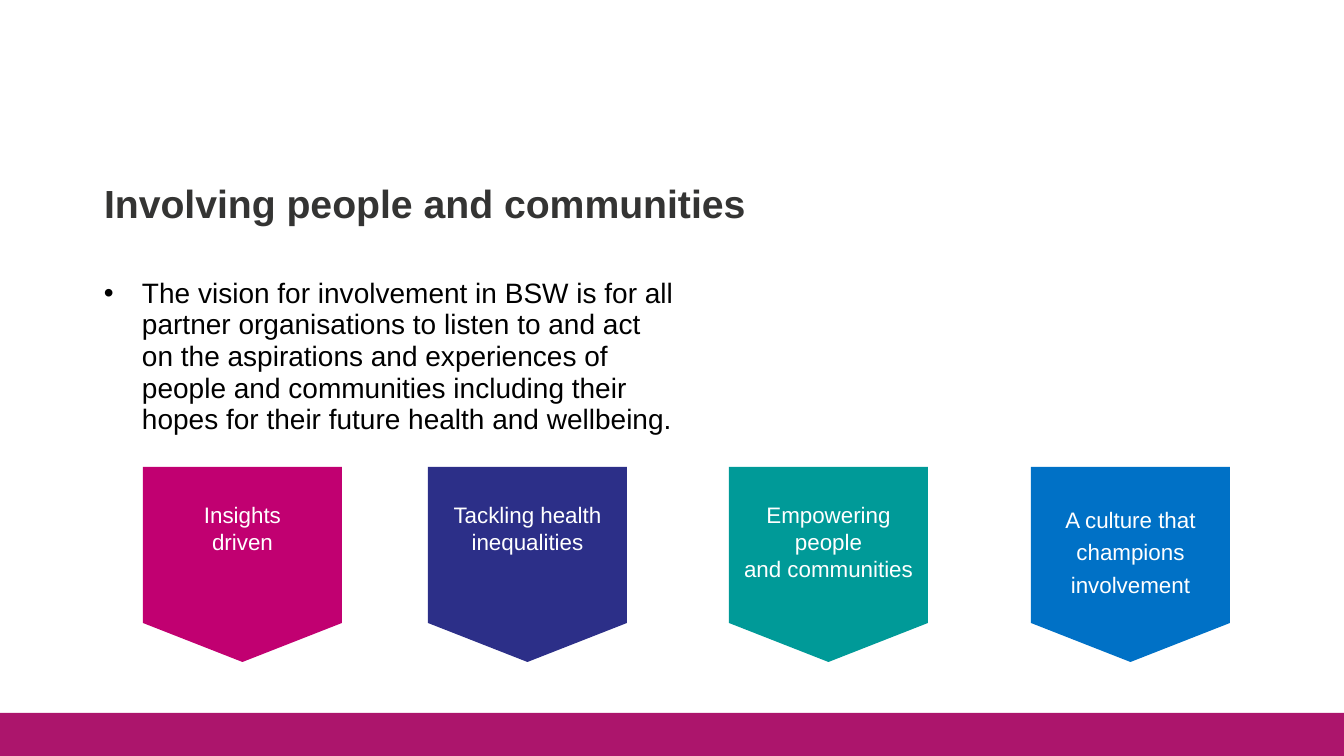
from pptx import Presentation
from pptx.dml.color import RGBColor
from pptx.enum.shapes import MSO_SHAPE as SHAPE
from pptx.enum.text import MSO_ANCHOR as ANCHOR, PP_ALIGN as ALIGN
from pptx.oxml.ns import qn
from pptx.util import Pt
from lxml.etree import SubElement

WIDTH, HEIGHT = 1344, 756
EMU_PER_PX = 12192000 / WIDTH

WHITE = RGBColor(0xFF, 0xFF, 0xFF)
BLACK = RGBColor(0x00, 0x00, 0x00)
CHARCOAL = RGBColor(0x34, 0x34, 0x33)
PLUM = RGBColor(0xAC, 0x15, 0x6C)
MAGENTA = RGBColor(0xC1, 0x00, 0x71)
INDIGO = RGBColor(0x2C, 0x2F, 0x88)
TEAL = RGBColor(0x00, 0x9A, 0x98)
BLUE = RGBColor(0x00, 0x71, 0xC6)

PRINCIPLES = [
    (143, MAGENTA, "Insights\vdriven", 1.0),
    (428, INDIGO, "Tackling health\vinequalities", 1.0),
    (729, TEAL, "Empowering people\vand communities", 1.0),
    (1031, BLUE, "A culture that champions involvement", 1.2),
]


def px(n):
    return round(n * EMU_PER_PX)


class Deck:
    """Holds the text style and the slide being built."""

    font = "Arial"

    def __init__(self, prs):
        self.s = prs.slides.add_slide(prs.slide_layouts[5])

    def place(self, sp, x, y, w, h):
        box = {"left": x, "top": y, "width": w, "height": h}
        for name, value in box.items():
            setattr(sp, name, px(value))

    def set_text(self, sp, text, size, color, spacing, align=ALIGN.LEFT,
                 bold=False, inset=5, bullet_indent=0):
        """Fill a shape with one top-anchored paragraph; inset is its top margin."""
        tf = sp.text_frame
        frame = {"word_wrap": True, "vertical_anchor": ANCHOR.TOP,
                 "margin_left": px(10), "margin_right": px(10),
                 "margin_top": px(inset), "margin_bottom": px(5)}
        for name, value in frame.items():
            setattr(tf, name, value)
        p = tf.paragraphs[0]
        p.text = text
        p.alignment, p.line_spacing = align, spacing
        if bullet_indent:
            pPr = p._p.get_or_add_pPr()
            pPr.set("marL", str(px(bullet_indent)))
            pPr.set("indent", str(-px(bullet_indent)))
            SubElement(pPr, qn("a:buFont")).set("typeface", self.font)
            SubElement(pPr, qn("a:buChar")).set("char", "•")
        style = {"name": self.font, "size": Pt(size), "bold": bold}
        for r in p.runs:
            for name, value in style.items():
                setattr(r.font, name, value)
            r.font.color.rgb = color

    def title(self, text, *box):
        sp = self.s.shapes.title
        self.place(sp, *box)
        self.set_text(sp, text, 28, CHARCOAL, 0.9, bold=True)

    def bullet(self, text, *box):
        sp = self.s.shapes.add_textbox(*map(px, box))
        self.set_text(sp, text, 20, BLACK, 0.94, bullet_indent=38)

    def shape(self, kind, fill, *box):
        sp = self.s.shapes.add_shape(kind, *map(px, box))
        sp.shadow.inherit = False
        sp.fill.solid()
        sp.fill.fore_color.rgb = fill
        sp.line.fill.background()
        return sp

    def principle(self, x, fill, text, spacing):
        sp = self.shape(SHAPE.FLOWCHART_OFFPAGE_CONNECTOR, fill, x, 467, 199, 195)
        self.set_text(sp, text, 16, WHITE, spacing, ALIGN.CENTER, inset=34)


def main():
    prs = Presentation()
    prs.slide_width, prs.slide_height = px(WIDTH), px(HEIGHT)
    deck = Deck(prs)
    deck.shape(SHAPE.RECTANGLE, PLUM, 0, 713, WIDTH, HEIGHT - 713)
    deck.title("Involving people and communities", 94, 180, 823, 55)
    deck.bullet(
        "The vision for involvement in BSW is for all partner organisations to "
        "listen to and act on the aspirations and experiences of people and "
        "communities including their hopes for their future health and wellbeing.",
        94, 273, 591, 160)
    for principle in PRINCIPLES:
        deck.principle(*principle)
    prs.save("out.pptx")


if __name__ == "__main__":
    main()
